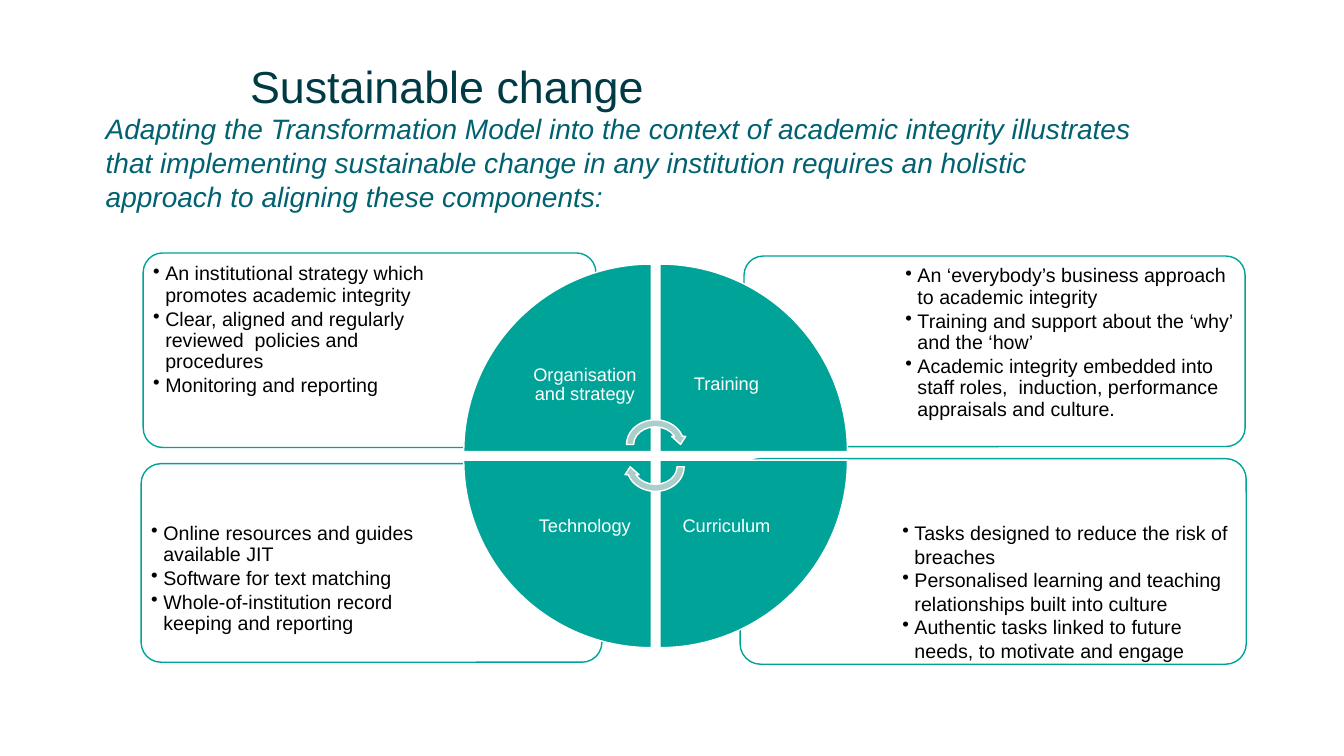
from lxml.etree import SubElement
from pptx import Presentation
from pptx.dml.color import RGBColor
from pptx.enum.shapes import MSO_SHAPE
from pptx.enum.text import MSO_ANCHOR, MSO_AUTO_SIZE, PP_ALIGN
from pptx.oxml.ns import qn
from pptx.util import Inches, Pt

TITLE = "Sustainable change"
LEAD = (
    "Adapting the Transformation Model into the context of academic integrity "
    "illustrates that implementing sustainable change in any institution requires "
    "an holistic approach to aligning these components:"
)
PANELS = [
    ((7.34, 4.55, 5.02, 2.04), (8.89, 5.11, 3.42, 1.44), 1, 0, [
        "Tasks designed to reduce the risk of breaches",
        "Personalised learning and teaching relationships built into culture",
        "Authentic tasks linked to future needs, to motivate and engage",
    ]),
    ((1.4, 4.6, 4.57, 1.97), (1.44, 5.13, 3.11, 1.39), 0.9, 2.1, [
        "Online resources and guides available JIT",
        "Software for text matching",
        "Whole-of-institution record keeping and reporting",
    ]),
    ((7.38, 2.54, 4.97, 1.89), (8.92, 2.58, 3.4, 1.33), 0.9, 2.1, [
        "An ‘everybody’s business approach to academic integrity",
        "Training and support about the ‘why’ and the ‘how’",
        "Academic integrity embedded into staff roles,  induction, "
        "performance appraisals and culture.",
    ]),
    ((1.42, 2.51, 4.49, 1.93), (1.46, 2.56, 3.06, 1.36), 0.9, 2.1, [
        "An institutional strategy which promotes academic integrity",
        "Clear, aligned and regularly reviewed  policies and procedures",
        "Monitoring and reporting",
    ]),
]
WEDGES = [
    ("Organisation and strategy", 0, 0),
    ("Training", 1, 0),
    ("Curriculum", 1, 1),
    ("Technology", 0, 1),
]
LEFT, TOP, SIDE, STEP, LABEL = 4.6, 2.62, 1.86, 1.945, 1.32
ARROWS = [(4.13, 0), (4.35, 180)]

FONT = "Arial"
DARK = RGBColor(0x00, 0x3B, 0x45)
BLUE = RGBColor(0x00, 0x61, 0x71)
TEAL = RGBColor(0x00, 0xA3, 0x98)
PALE = RGBColor(0xAB, 0xCE, 0xCA)
WHITE = RGBColor(0xFF, 0xFF, 0xFF)
BLACK = RGBColor(0x00, 0x00, 0x00)


def style(para, size, color, italic=None):
    font = para.font
    font.name, font.size, font.italic = FONT, Pt(size), italic
    font.color.rgb = color


def inset(frame, gap):
    frame.margin_left = frame.margin_right = Inches(gap)
    frame.margin_top = frame.margin_bottom = Inches(gap)


def add_shape(kind, box, fill, line, turn=0):
    shape = slide.shapes.add_shape(kind, *map(Inches, box))
    shape.shadow.inherit = False
    shape.fill.solid()
    shape.fill.fore_color.rgb = fill
    shape.line.color.rgb = line
    shape.line.width = Pt(1)
    shape.rotation = turn
    return shape


def add_text(box, lines, gap):
    frame = slide.shapes.add_textbox(*map(Inches, box)).text_frame
    frame.word_wrap = True
    inset(frame, gap)
    frame.text = "\n".join(lines)
    return frame


def add_bullet(para):
    props = para._p.get_or_add_pPr()
    props.set("marL", str(Inches(0.12)))
    props.set("indent", str(-Inches(0.12)))
    SubElement(props, qn("a:buChar")).set("char", "•")


deck = Presentation()
deck.slide_width, deck.slide_height = Inches(13.33), Inches(7.5)
slide = deck.slides.add_slide(deck.slide_layouts[5])

title = slide.shapes.title
title.left, title.top = Inches(2.48), Inches(0.66)
title.width, title.height = Inches(9.76), Inches(0.5)
frame = title.text_frame
frame.text = TITLE
frame.auto_size = MSO_AUTO_SIZE.NONE
frame.vertical_anchor = MSO_ANCHOR.TOP
inset(frame, 0)
para = frame.paragraphs[0]
para.alignment = PP_ALIGN.LEFT
para.line_spacing = Pt(33)
style(para, 32, DARK)

for box, area, pitch, after, lines in PANELS:
    panel = add_shape(MSO_SHAPE.ROUNDED_RECTANGLE, box, WHITE, TEAL)
    panel.adjustments[0] = 0.1
    tint = panel._element.spPr.find(qn("a:solidFill"))[0]
    SubElement(tint, qn("a:alpha")).set("val", "90000")
    for para in add_text(area, lines, 0.06).paragraphs:
        add_bullet(para)
        para.level = 1
        para.line_spacing = pitch
        para.space_after = Pt(after)
        style(para, 14, BLACK)

for turn, (name, col, row) in enumerate(WEDGES):
    x, y = LEFT + col * STEP, TOP + row * STEP
    add_shape(MSO_SHAPE.PIE_WEDGE, (x, y, SIDE, SIDE), TEAL, WHITE, turn * 90)
    shift = SIDE - LABEL
    area = (x + shift * (1 - col), y + shift * (1 - row), LABEL, LABEL)
    frame = add_text(area, [name], 0.1)
    frame.vertical_anchor = MSO_ANCHOR.MIDDLE
    para = frame.paragraphs[0]
    para.alignment = PP_ALIGN.CENTER
    para.line_spacing = 0.9
    style(para, 13, WHITE)

for y, turn in ARROWS:
    add_shape(MSO_SHAPE.CIRCULAR_ARROW, (6.18, y, 0.64, 0.56), PALE, WHITE, turn)

frame = slide.shapes.add_textbox(
    Inches(0.95), Inches(1.06), Inches(10.48), Inches(1.11)).text_frame
frame.word_wrap = True
frame.auto_size = MSO_AUTO_SIZE.SHAPE_TO_FIT_TEXT
frame.text = LEAD
style(frame.paragraphs[0], 20, BLUE, True)

deck.save("out.pptx")
